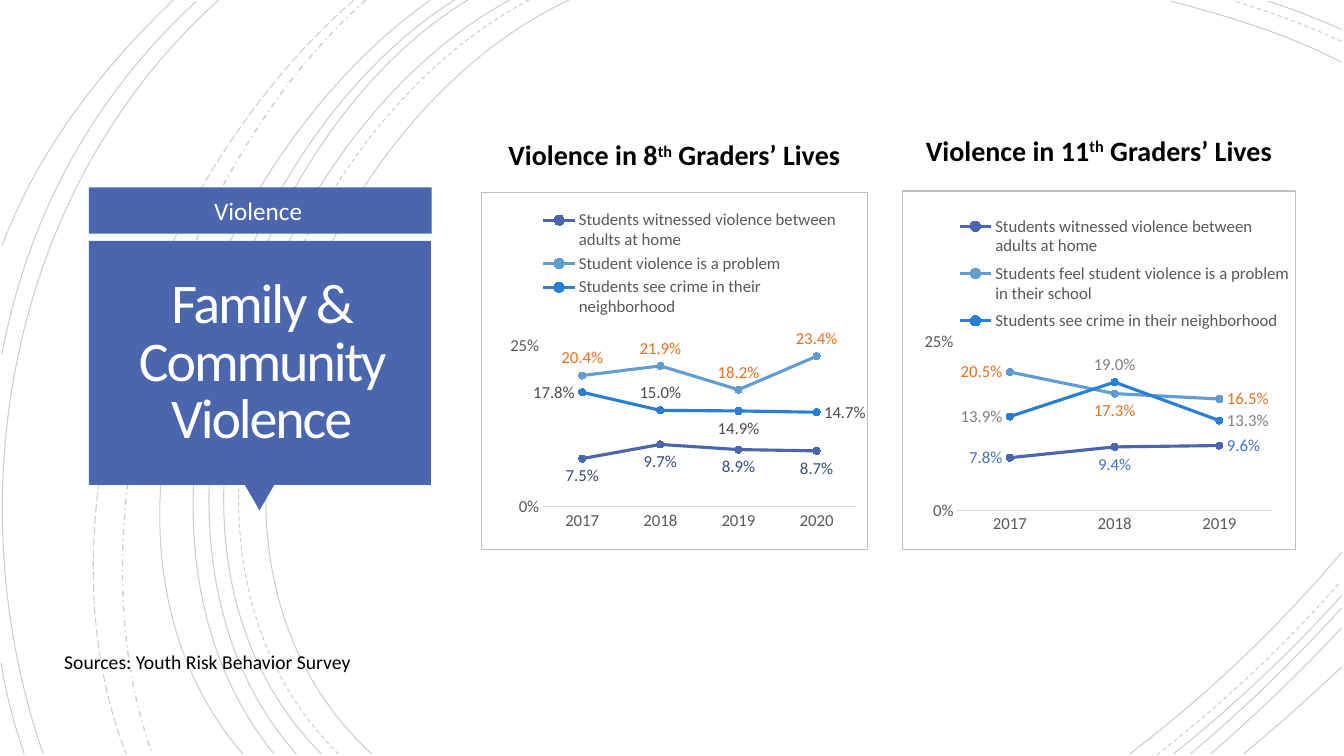
from lxml import etree
from pptx import Presentation
from pptx.chart.data import CategoryChartData
from pptx.dml.color import RGBColor
from pptx.enum.chart import (XL_CHART_TYPE, XL_LABEL_POSITION, XL_LEGEND_POSITION,
                             XL_MARKER_STYLE, XL_TICK_MARK)
from pptx.enum.dml import MSO_LINE
from pptx.enum.shapes import MSO_SHAPE
from pptx.enum.text import MSO_ANCHOR, PP_ALIGN
from pptx.oxml import parse_xml
from pptx.oxml.ns import nsdecls, qn
from pptx.util import Cm, Pt

FONT = "Calibri"
INDIGO = RGBColor(0x4A, 0x66, 0xAC)
SKY = RGBColor(0x62, 0x9D, 0xD1)
AZURE = RGBColor(0x29, 0x7F, 0xD5)
NAVY = RGBColor(0x38, 0x4C, 0x81)
BLUE = RGBColor(0x44, 0x72, 0xC4)
ORANGE = RGBColor(0xEB, 0x70, 0x1D)
PLUM = RGBColor(0x50, 0x46, 0x52)
GRAY = RGBColor(0x80, 0x80, 0x80)
AXIS_TEXT = RGBColor(0x59, 0x59, 0x59)
AXIS_LINE = RGBColor(0xD9, 0xD9, 0xD9)
BLACK = RGBColor(0, 0, 0)
WHITE = RGBColor(0xFF, 0xFF, 0xFF)
SOLID, DASH = MSO_LINE.SOLID, MSO_LINE.DASH
LONG_DASH, DASH_DOT = MSO_LINE.LONG_DASH, MSO_LINE.DASH_DOT
CENTER, LEFT = PP_ALIGN.CENTER, PP_ALIGN.LEFT
TOP, MIDDLE = MSO_ANCHOR.TOP, MSO_ANCHOR.MIDDLE
ABOVE, BELOW = XL_LABEL_POSITION.ABOVE, XL_LABEL_POSITION.BELOW
BEFORE, AFTER = XL_LABEL_POSITION.LEFT, XL_LABEL_POSITION.RIGHT
NO_TICK = XL_TICK_MARK.NONE

# Background arcs in cm: start, two control points, end, dash
ARCS = [
    # left side
    ((14.35, 0), (8, 2.92), (3.63, 13.72), (9.37, 19), SOLID),
    ((13.34, 0), (7.24, 3.18), (3.12, 13.64), (8.53, 19), DASH),
    ((12.85, 0), (6.86, 3.23), (2.79, 13.64), (8.1, 19), SOLID),
    ((11.79, 0), (6.2, 3.38), (2.79, 13.74), (7.47, 19), SOLID),
    ((11.46, 0), (5.87, 3.51), (2.46, 13.54), (6.91, 19), SOLID),
    ((10.85, 0), (5.51, 3.73), (1.35, 13.44), (6.12, 19), SOLID),
    ((9.22, 0), (4.47, 4.22), (1.65, 12.93), (3.84, 19), DASH_DOT),
    ((8.92, 0), (3.99, 4.29), (0.74, 12.67), (3.18, 19), LONG_DASH),
    ((5.51, 0), (0.28, 4.7), (-1.17, 12.45), (1.09, 19), SOLID),
    ((4.95, 0.03), (2.34, 2.44), (0.71, 5.44), (0.05, 8.92), SOLID),
    ((0.03, 16.71), (0.15, 17.5), (0.36, 18.26), (0.61, 19), SOLID),
    ((4.37, 0), (2.54, 1.75), (0.94, 3.81), (0.05, 6.2), SOLID),
    # top right corner
    ((33.81, 1.57), (32.46, 0.86), (30.94, 0.41), (29.51, 0.03), SOLID),
    ((33.81, 1.04), (32.94, 0.64), (32, 0.3), (31.12, 0.03), DASH),
    ((33.81, 0.74), (33.2, 0.48), (32.59, 0.23), (31.95, 0.03), SOLID),
    # bottom right corner
    ((28.47, 19), (30.4, 17.53), (32.23, 15.8), (33.81, 13.92), SOLID),
    ((29.16, 19.02), (30.81, 17.73), (32.39, 16.26), (33.78, 14.66), DASH),
    ((29.57, 19), (31.06, 17.81), (32.51, 16.46), (33.81, 15.01), SOLID),
    ((30, 19), (31.34, 17.88), (32.61, 16.64), (33.81, 15.32), SOLID),
    ((30.51, 19), (31.65, 18.01), (32.77, 16.94), (33.81, 15.82), SOLID),
    ((31.34, 19), (32.18, 18.31), (32.99, 17.58), (33.81, 16.81), SOLID),
]

# Title panel: preset, (left, top, width, height) in cm, rotation
PANELS = [
    (MSO_SHAPE.RECTANGLE, (2.24, 4.72, 8.64, 1.17), 0),
    (MSO_SHAPE.ISOSCELES_TRIANGLE, (6.17, 12.22, 0.74, 0.64), 180),
    (MSO_SHAPE.RECTANGLE, (2.24, 6.07, 8.62, 6.15), 0),
]

# Charts: heading runs, boxes, layout fractions, categories, series
# Series: name, values, line colour, label colour, label positions
CHARTS = [
    dict(heading=("Violence in 8", "th", " Graders’ Lives"),
         heading_box=(12.12, 3.35, 9.75, 1.12), box=(12.12, 4.83, 9.75, 9.04),
         plot=(0.16, 0.43, 0.81, 0.45), legend=(0.14, 0.04, 0.8, 0.32),
         years=["2017", "2018", "2019", "2020"],
         series=[
             ("Students witnessed violence between adults at home",
              (0.075, 0.097, 0.089, 0.087), INDIGO, NAVY, [BELOW] * 4),
             ("Student violence is a problem",
              (0.204, 0.219, 0.182, 0.234), SKY, ORANGE, [ABOVE] * 4),
             ("Students see crime in their neighborhood",
              (0.178, 0.15, 0.149, 0.147), AZURE, PLUM, [BEFORE, ABOVE, BELOW, AFTER]),
         ]),
    dict(heading=("Violence in 11", "th", " Graders’ Lives"),
         heading_box=(22.73, 3.23, 9.93, 1.12), box=(22.73, 4.8, 9.93, 9.07),
         plot=(0.14, 0.42, 0.8, 0.47), legend=(0.14, 0.05, 0.85, 0.36),
         years=["2017", "2018", "2019"],
         series=[
             ("Students witnessed violence between adults at home",
              (0.078, 0.094, 0.096), INDIGO, BLUE, [BEFORE, BELOW, AFTER]),
             ("Students feel student violence is a problem in their school",
              (0.205, 0.173, 0.165), SKY, ORANGE, [BEFORE, BELOW, AFTER]),
             ("Students see crime in their neighborhood",
              (0.139, 0.19, 0.133), AZURE, GRAY, [BEFORE, ABOVE, AFTER]),
         ]),
]


def place(box):
    return [Cm(length) for length in box]


def add_text(slide, box, *runs, size, color=BLACK, bold=False, align=CENTER,
             anchor=TOP, inset=None, line_spacing=None, tracking=None):
    """Add a text box; every second run is superscript."""
    frame = slide.shapes.add_textbox(*place(box)).text_frame
    frame.word_wrap = True
    frame.vertical_anchor = anchor
    if inset is not None:
        frame.margin_left = frame.margin_right = Cm(inset)
        frame.margin_top = frame.margin_bottom = Cm(inset)
    paragraph = frame.paragraphs[0]
    paragraph.alignment = align
    if line_spacing:
        paragraph.line_spacing = line_spacing
    for index, text in enumerate(runs):
        run = paragraph.add_run()
        run.text = text
        set_font(run.font, size, color, bold)
        properties = run.font._element
        if index % 2:
            properties.set("baseline", "30000")
        if tracking:
            properties.set("spc", str(tracking))


def set_font(font, size, color, bold=False):
    font.name, font.size, font.bold = FONT, Pt(size), bold
    font.color.rgb = color


def add_arc(slide, points, dash):
    start, *rest = [tuple(place(point)) for point in points]
    builder = slide.shapes.build_freeform(*start)
    builder.add_line_segments(rest, close=False)
    shape = builder.convert_to_shape()
    shape.shadow.inherit = False
    shape.fill.background()
    shape.line.color.rgb = BLACK
    shape.line.width = Pt(1 if dash == DASH_DOT else 0.75)
    shape.line.dash_style = dash
    color = next(shape.line._ln.iter(qn("a:srgbClr")))
    etree.SubElement(color, qn("a:alpha")).set("val", "20000")
    # Turn the three straight segments into one cubic curve
    outline = next(shape._element.iter(qn("a:path")))
    curve = etree.SubElement(outline, qn("a:cubicBezTo"))
    for segment in outline.findall(qn("a:lnTo")):
        curve.append(segment[0])
        outline.remove(segment)


def set_layout(parent, index, fractions, inner=False):
    for old in parent.findall(qn("c:layout")):
        parent.remove(old)
    target = '<c:layoutTarget val="inner"/>' if inner else ""
    modes = '<c:xMode val="edge"/><c:yMode val="edge"/>'
    sizes = "".join(f'<c:{key} val="{value}"/>' for key, value in zip("xywh", fractions))
    parent.insert(index, parse_xml(
        f'<c:layout {nsdecls("c")}><c:manualLayout>{target}{modes}{sizes}'
        '</c:manualLayout></c:layout>'))


def add_line_chart(slide, content):
    data = CategoryChartData(number_format="0.0%")
    data.categories = content["years"]
    for name, values, *_ in content["series"]:
        data.add_series(name, values)
    chart = slide.shapes.add_chart(
        XL_CHART_TYPE.LINE_MARKERS, *place(content["box"]), data).chart
    chart.has_title = False
    set_font(chart.font, 12, BLACK)

    # Legend and plot area
    chart.has_legend = True
    chart.legend.position = XL_LEGEND_POSITION.BOTTOM
    chart.legend.include_in_layout = False
    set_font(chart.legend.font, 12, AXIS_TEXT)
    set_layout(chart.legend._element, 1, content["legend"])
    chart_element = chart.element.find(qn("c:chart"))
    set_layout(chart_element.find(qn("c:plotArea")), 0, content["plot"], inner=True)
    chart_element.addnext(parse_xml(
        f'<c:spPr {nsdecls("c", "a")}><a:noFill/><a:ln w="9525"><a:solidFill>'
        '<a:srgbClr val="BFBFBF"/></a:solidFill></a:ln></c:spPr>'))

    # Axes
    for axis in (chart.category_axis, chart.value_axis):
        axis.major_tick_mark = axis.minor_tick_mark = NO_TICK
        axis.has_major_gridlines = False
        set_font(axis.tick_labels.font, 12, AXIS_TEXT)
    chart.category_axis.format.line.color.rgb = AXIS_LINE
    chart.category_axis.format.line.width = Pt(0.75)
    value_axis = chart.value_axis
    value_axis.format.line.fill.background()
    value_axis.minimum_scale, value_axis.maximum_scale = 0, 0.25
    value_axis.major_unit = 0.25
    value_axis.tick_labels.number_format = "0%"
    value_axis.tick_labels.number_format_is_linked = False

    # Series and labels
    chart.plots[0].vary_by_categories = False
    for series, row in zip(chart.plots[0].series, content["series"]):
        _, _, line_color, label_color, positions = row
        series.smooth = False
        series.format.line.color.rgb = line_color
        series.format.line.width = Pt(2.25)
        marker = series.marker
        marker.style, marker.size = XL_MARKER_STYLE.CIRCLE, 5
        marker.format.fill.solid()
        marker.format.fill.fore_color.rgb = line_color
        marker.format.line.color.rgb = line_color
        series.data_labels.show_value = True
        set_font(series.data_labels.font, 12, label_color)
        for index, position in enumerate(positions):
            label = series.points[index].data_label
            set_font(label.font, 12, label_color)
            label.position = position


def main():
    presentation = Presentation()
    presentation.slide_width, presentation.slide_height = Cm(33.87), Cm(19.05)
    slide = presentation.slides.add_slide(presentation.slide_layouts[6])
    for *points, dash in ARCS:
        add_arc(slide, points, dash)
    for preset, box, rotation in PANELS:
        shape = slide.shapes.add_shape(preset, *place(box))
        shape.shadow.inherit = False
        shape.rotation = rotation
        shape.fill.solid()
        shape.fill.fore_color.rgb = INDIGO
        shape.line.fill.background()
    add_text(slide, (2.34, 6.12, 8.51, 6.1), "Family & Community Violence", size=40,
             color=WHITE, anchor=MIDDLE, inset=0.64, line_spacing=0.85, tracking=-150)
    add_text(slide, (2.16, 4.8, 8.69, 1.02), "Violence", size=18, color=WHITE)
    for content in CHARTS:
        add_text(slide, content["heading_box"], *content["heading"], size=20, bold=True)
        add_line_chart(slide, content)
    add_text(slide, (1.37, 16.26, 10.44, 0.86), "Sources: Youth Risk Behavior Survey",
             size=14, align=LEFT)
    presentation.save("out.pptx")


if __name__ == "__main__":
    main()
